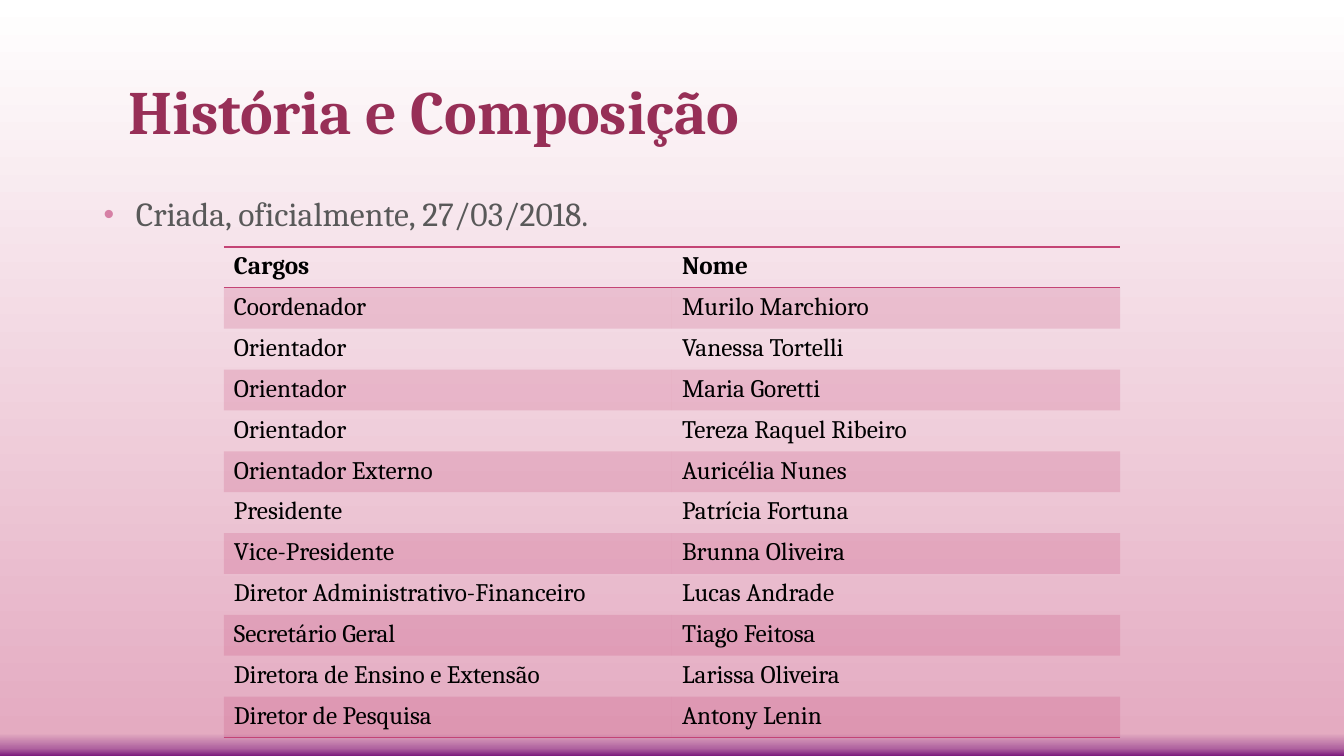
from lxml import etree
from pptx import Presentation
from pptx.dml.color import RGBColor
from pptx.enum.text import MSO_ANCHOR
from pptx.oxml.ns import qn
from pptx.util import Inches, Pt

BOTTOM, TOP = MSO_ANCHOR.BOTTOM, MSO_ANCHOR.TOP
FONT = "Cambria"
TITLE_ONLY = 5
NO_STYLE = "{2D5ABB26-0587-4C30-8999-92F81FD0307C}"
COLORS = {"title": "972F57", "body": "595959", "bullet": "D680A5",
          "cell": "000000", "accent": "C44475"}
BACKGROUND = [(0, "FFFFFF"), (97, "E4ABC1"), (99, "AF639F"), (100, "7A1A7C")]
MEMBERS = [
    ("Cargos", "Nome"),
    ("Coordenador", "Murilo Marchioro"),
    ("Orientador", "Vanessa Tortelli"),
    ("Orientador", "Maria Goretti"),
    ("Orientador", "Tereza Raquel Ribeiro"),
    ("Orientador Externo", "Auricélia Nunes"),
    ("Presidente", "Patrícia Fortuna"),
    ("Vice-Presidente", "Brunna Oliveira"),
    ("Diretor Administrativo-Financeiro", "Lucas Andrade"),
    ("Secretário Geral", "Tiago Feitosa"),
    ("Diretora de Ensino e Extensão", "Larissa Oliveira"),
    ("Diretor de Pesquisa", "Antony Lenin"),
]


def add_xml(parent, tag, **attributes):
    """Append a DrawingML element and return it."""
    return etree.SubElement(parent, qn(tag), attributes)


class SlideBuilder:
    """Holds the shared style and the current slide."""

    def __init__(self, deck):
        """Add a title-only slide to the deck."""
        self.slide = deck.slides.add_slide(deck.slide_layouts[TITLE_ONLY])

    def background(self, stops):
        """Fill the background from top to bottom with colour stops."""
        fill = self.slide.background.fill
        fill.gradient()
        fill.gradient_angle = 270
        stop_list = self.slide.element.find(".//" + qn("a:gsLst"))
        for default_stop in list(stop_list):
            stop_list.remove(default_stop)
        for percent, color in stops:
            stop = add_xml(stop_list, "a:gs", pos=str(percent * 1000))
            add_xml(stop, "a:srgbClr", val=color)

    def style_text(self, frame, text, size, color, bold=False):
        """Fill a frame with one styled paragraph and return it."""
        frame.word_wrap = True
        paragraph = frame.paragraphs[0]
        paragraph.text = text
        font = paragraph.font
        font.name, font.size, font.bold = FONT, Pt(size), bold
        font.color.rgb = RGBColor.from_string(COLORS[color])
        return paragraph

    def title(self, text, left, top, width, height):
        """Place and format the slide title."""
        title = self.slide.shapes.title
        title.left, title.top = Inches(left), Inches(top)
        title.width, title.height = Inches(width), Inches(height)
        title.text_frame.vertical_anchor = BOTTOM
        heading = self.style_text(title.text_frame, text, 44, "title", True)
        heading.line_spacing = 0.9
        heading._p.get_or_add_pPr().set("algn", "l")

    def bullet(self, text, left, top, width, height):
        """Add a bulleted line of body text."""
        box = self.slide.shapes.add_textbox(
            Inches(left), Inches(top), Inches(width), Inches(height))
        box.text_frame.vertical_anchor = TOP
        item = self.style_text(box.text_frame, text, 24, "body")
        item.line_spacing = 0.9
        properties = item._p.get_or_add_pPr()
        indent = Inches(0.32)
        properties.set("marL", str(indent))
        properties.set("indent", str(-indent))
        marker = etree.Element(qn("a:buClr"))
        add_xml(marker, "a:srgbClr", val=COLORS["bullet"])
        size = etree.Element(qn("a:buSzPct"), val="90000")
        typeface = etree.Element(qn("a:buFont"), typeface="Arial")
        symbol = etree.Element(qn("a:buChar"), char="•")
        position = properties.index(properties.find(qn("a:defRPr")))
        properties[position:position] = [marker, size, typeface, symbol]

    def tint(self, cell):
        """Give a cell a translucent accent fill."""
        cell.fill.solid()
        cell.fill.fore_color.rgb = RGBColor.from_string(COLORS["accent"])
        color = cell._tc.tcPr.find(".//" + qn("a:srgbClr"))
        add_xml(color, "a:alpha", val="20000")

    def rules(self, cell, sides):
        """Draw accent borders on the given sides of a cell."""
        for position, side in enumerate(sides):
            border = etree.Element(qn("a:ln" + side), w=str(Pt(1)))
            fill = add_xml(border, "a:solidFill")
            add_xml(fill, "a:srgbClr", val=COLORS["accent"])
            cell._tc.get_or_add_tcPr().insert(position, border)

    def table(self, rows, left, top, width, height):
        """Add a banded table with ruled header and last row."""
        table = self.slide.shapes.add_table(
            len(rows), len(rows[0]), Inches(left), Inches(top),
            Inches(width), Inches(height)).table
        table.horz_banding = False
        table._tbl.tblPr.find(qn("a:tableStyleId")).text = NO_STYLE
        sides = {0: "TB", len(rows) - 1: "B"}
        for row_index, row in enumerate(rows):
            for column, text in enumerate(row):
                cell = table.cell(row_index, column)
                self.style_text(cell.text_frame, text, 18, "cell",
                                row_index == 0)
                if row_index % 2:
                    self.tint(cell)
                else:
                    cell.fill.background()
                self.rules(cell, sides.get(row_index, ""))


def main():
    """Build and save the slide."""
    deck = Presentation()
    deck.slide_width, deck.slide_height = Inches(13.33), Inches(7.5)
    builder = SlideBuilder(deck)
    builder.background(BACKGROUND)
    builder.title("História e Composição", 1.17, 0.22, 11, 1.3)
    builder.bullet("Criada, oficialmente, 27/03/2018.", 0.93, 1.91, 11, 4.67)
    builder.table(MEMBERS, 2.22, 2.45, 8.89, 4.87)
    deck.save("out.pptx")


if __name__ == "__main__":
    main()
